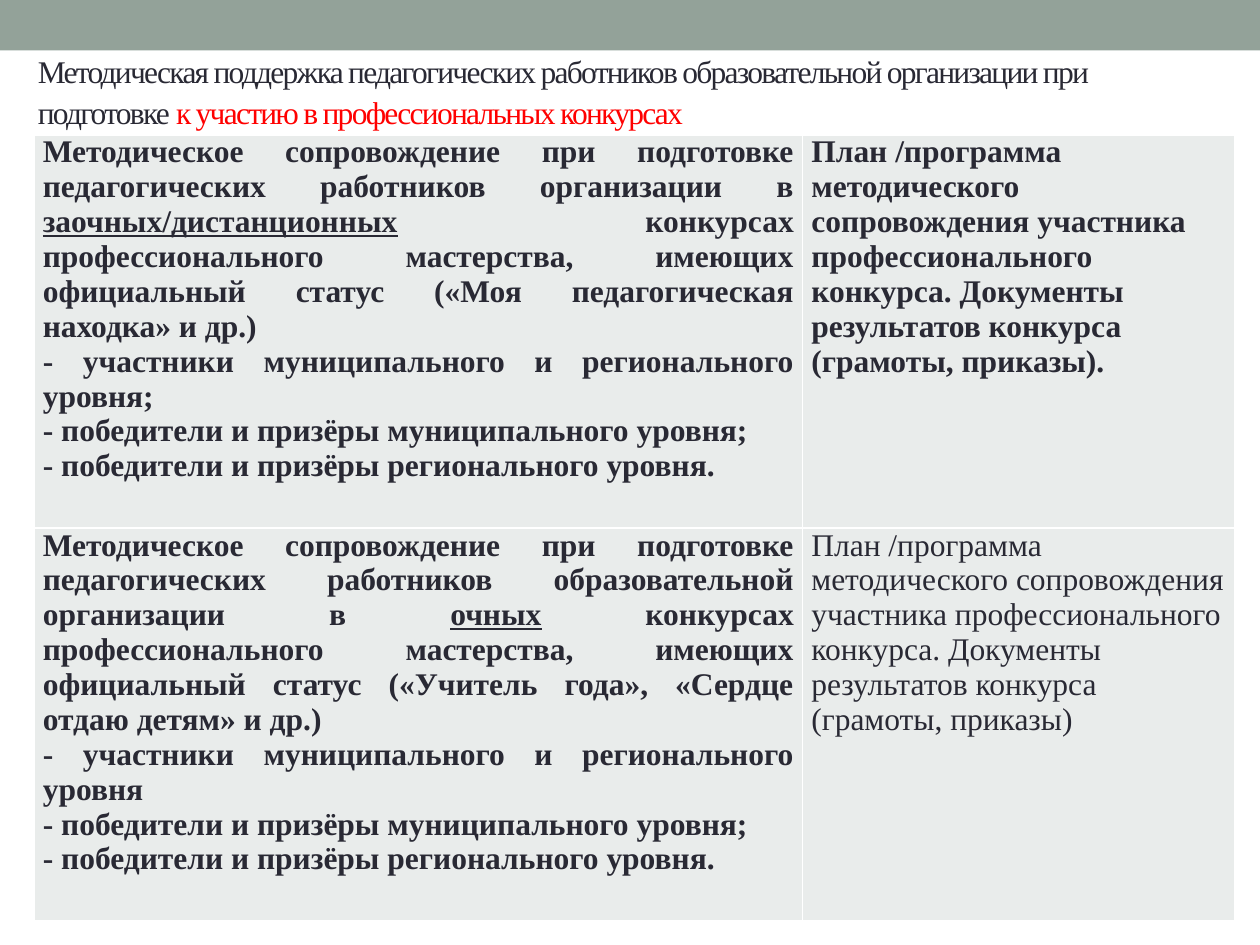
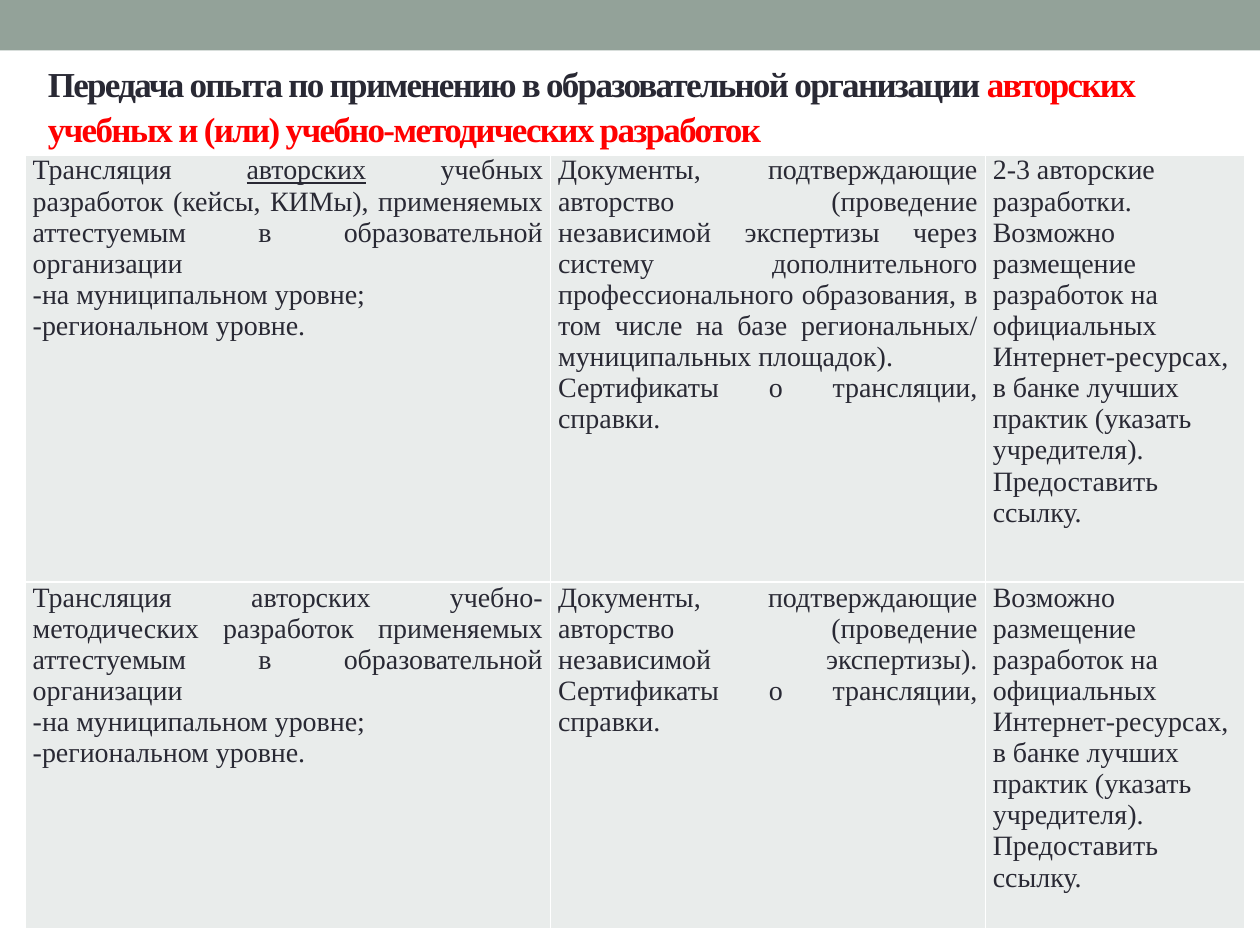
from pptx import Presentation
from pptx.dml.color import RGBColor
from pptx.enum.shapes import MSO_SHAPE as Preset
from pptx.enum.text import MSO_ANCHOR as Anchor, MSO_AUTO_SIZE as AutoSize, PP_ALIGN as Align
from pptx.util import Inches, Pt

SAGE = RGBColor(0x93, 0xA2, 0x99)
INK = RGBColor(0x29, 0x29, 0x34)
RED = RGBColor(0xFF, 0x00, 0x00)
CELL = RGBColor(0xE9, 0xEC, 0xEB)

deck = Presentation()
deck.slide_width, deck.slide_height = Inches(10), Inches(7.5)
COLUMN, ROW = deck.slide_width / 100, deck.slide_height / 100
TITLE_FRAME = {"auto_size": AutoSize.NONE, "word_wrap": True, "vertical_anchor": Anchor.MIDDLE}


def set_all(target, values):
    for name, value in values.items():
        setattr(target, name, value)


def write(frame, lines, align, font, marked):
    for number, line in enumerate(lines):
        para = frame.paragraphs[0] if number == 0 else frame.add_paragraph()
        para.alignment = align
        for position, words in enumerate(line.split("|")):
            span = para.add_run()
            span.text = words
            style = {"name": "Times New Roman", "color": INK} | font
            if position % 2:
                style |= marked
            span.font.color.rgb = style.pop("color")
            set_all(span.font, style)


MUNICIPAL_WINNERS = "- победители и призёры муниципального уровня;"
REGIONAL_WINNERS = "- победители и призёры регионального уровня."
CONTEST_PLAN = (
    "План /программа методического сопровождения участника профессионального конкурса. "
    "Документы результатов конкурса (грамоты, приказы)"
)
LEVELS = ["-на муниципальном уровне;", "-региональном уровне."]
PUBLISHING = (
    "Возможно размещение разработок на официальных Интернет-ресурсах, "
    "в банке лучших практик (указать учредителя). Предоставить ссылку."
)

pages = [
    {
        "title": "Методическая поддержка педагогических работников образовательной организации "
                 "при подготовке |к участию в профессиональных конкурсах",
        "title_box": (2, 4.8, 96.1, 9.47),
        "title_font": {"size": Pt(18), "bold": False},
        "table_corner": (2.7, 14.27),
        "widths": [61, 34.3],
        "heights": [41.6, 41.6],
        "margin": 0.7,
        "size": Pt(18),
        "bold": [[True, True], [True, False]],
        "cells": [
            [
                [
                    "Методическое сопровождение при подготовке педагогических работников "
                    "организации в |заочных/дистанционных| конкурсах профессионального мастерства, "
                    "имеющих официальный статус («Моя педагогическая находка» и др.)",
                    "- участники муниципального и регионального уровня;",
                    MUNICIPAL_WINNERS,
                    REGIONAL_WINNERS,
                ],
                [CONTEST_PLAN + "."],
            ],
            [
                [
                    "Методическое сопровождение при подготовке педагогических работников "
                    "образовательной организации в |очных| конкурсах профессионального мастерства, "
                    "имеющих официальный статус («Учитель года», «Сердце отдаю детям» и др.)",
                    "- участники муниципального и регионального уровня",
                    MUNICIPAL_WINNERS,
                    REGIONAL_WINNERS,
                ],
                [CONTEST_PLAN],
            ],
        ],
    },
    {
        "title": "Передача опыта по применению в образовательной организации "
                 "|авторских учебных и (или) учебно-методических разработок",
        "title_box": (2.8, 3.87, 95.3, 14.4),
        "title_font": {"size": Pt(20), "bold": True},
        "table_corner": (2, 16.4),
        "widths": [41.7, 34.5, 20.6],
        "heights": [45.2, 36.67],
        "margin": 0.6,
        "size": Pt(16),
        "bold": [[False] * 3] * 2,
        "cells": [
            [
                [
                    "Трансляция |авторских| учебных разработок (кейсы, КИМы), применяемых "
                    "аттестуемым в образовательной организации ",
                    *LEVELS,
                ],
                [
                    "Документы, подтверждающие авторство (проведение независимой экспертизы "
                    "через систему дополнительного профессионального образования, в том числе "
                    "на базе региональных/ муниципальных площадок).",
                    "Сертификаты о трансляции, справки.",
                ],
                ["2-3 авторские разработки.", PUBLISHING],
            ],
            [
                [
                    "Трансляция авторских учебно-методических разработок применяемых "
                    "аттестуемым в образовательной организации ",
                    *LEVELS,
                ],
                [
                    "Документы, подтверждающие авторство (проведение независимой экспертизы). "
                    "Сертификаты о трансляции, справки."
                ],
                [PUBLISHING],
            ],
        ],
    },
]

for content in pages:
    page = deck.slides.add_slide(deck.slide_layouts[5])

    band = page.shapes.add_shape(Preset.RECTANGLE, 0, 0, deck.slide_width, int(5.33 * ROW))
    band.shadow.inherit = False
    band.fill.solid()
    band.fill.fore_color.rgb = SAGE
    band.line.fill.background()

    title = page.shapes.title
    left, top, width, height = content["title_box"]
    set_all(title, {"left": int(left * COLUMN), "top": int(top * ROW),
                    "width": int(width * COLUMN), "height": int(height * ROW)})
    set_all(title.text_frame, TITLE_FRAME)
    write(title.text_frame, [content["title"]], Align.LEFT, content["title_font"], {"color": RED})
    heading = title.text_frame.paragraphs[0]
    heading.line_spacing = 1.07
    for span in heading.runs:
        span.font._element.set("spc", "-100")

    widths, heights = content["widths"], content["heights"]
    left, top = content["table_corner"]
    table = page.shapes.add_table(
        len(heights), len(widths), int(left * COLUMN), int(top * ROW),
        int(sum(widths) * COLUMN), int(sum(heights) * ROW),
    ).table
    for column, width in zip(table.columns, widths):
        column.width = int(width * COLUMN)
    for row, height in zip(table.rows, heights):
        row.height = int(height * ROW)

    margin = int(content["margin"] * COLUMN)
    for row_number, row_cells in enumerate(content["cells"]):
        for column_number, lines in enumerate(row_cells):
            cell = table.cell(row_number, column_number)
            set_all(cell, {"margin_left": margin, "margin_right": margin,
                           "margin_top": 0, "margin_bottom": 0})
            cell.fill.solid()
            cell.fill.fore_color.rgb = CELL
            last = column_number == len(widths) - 1
            font = {"size": content["size"], "bold": content["bold"][row_number][column_number]}
            write(cell.text_frame, lines, Align.LEFT if last else Align.JUSTIFY,
                  font, {"underline": True})

deck.save("out.pptx")
